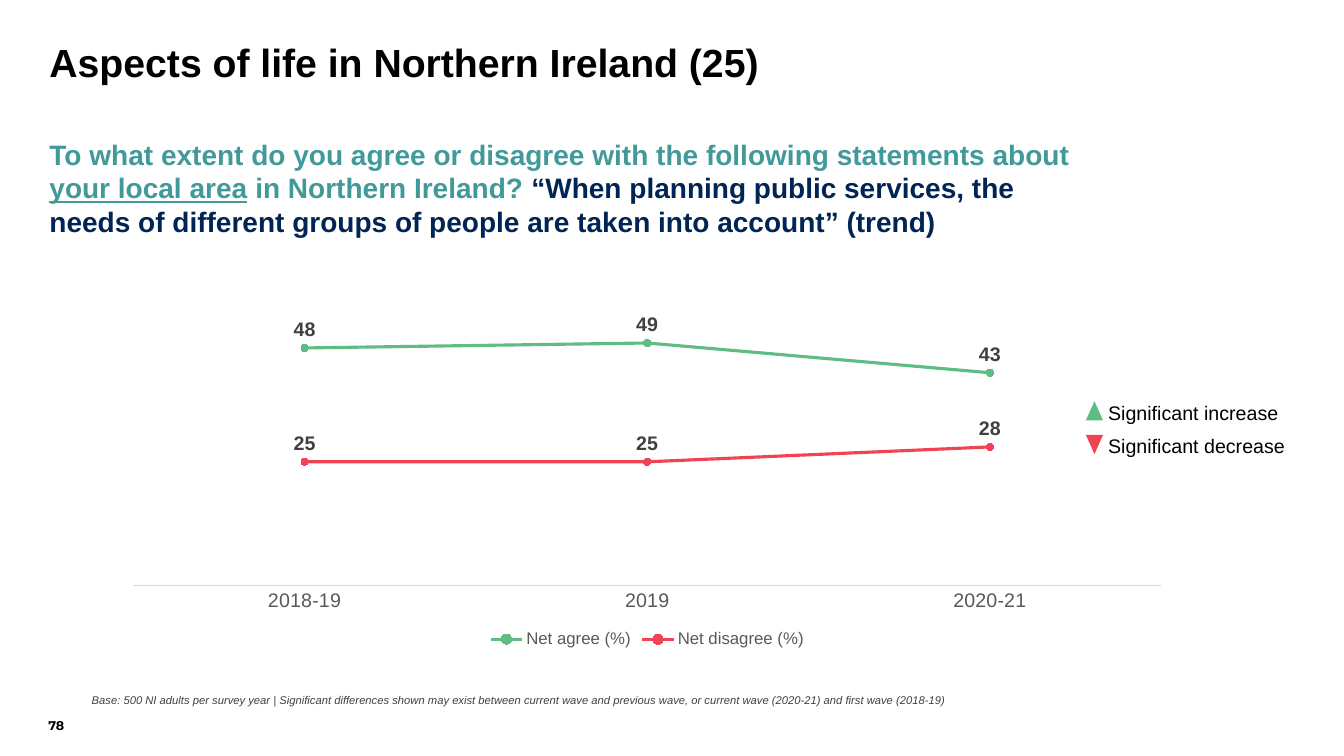
import pptx
import pptx.util
import pptx.dml.color
import pptx.chart.data
import pptx.enum.chart
import pptx.enum.shapes
import pptx.enum.text

Inches = pptx.util.Inches
Pt = pptx.util.Pt
Anchor = pptx.enum.text.MSO_ANCHOR

HUES = {
    "black": "000000", "teal": "419999", "navy": "002554", "green": "5FBD83",
    "red": "F14354", "dark": "404040", "grey": "595959", "rule": "D9D9D9",
}


def tint(name):
    """Return the named colour."""
    return pptx.dml.color.RGBColor.from_string(HUES[name])


def style(font, size, hue, bold=None, face="Arial"):
    """Set the face, size, colour and weight of a font."""
    font.name = face
    font.size = Pt(size)
    font.color.rgb = tint(hue)
    font.bold = bold


def write(slide, box, runs, size, bold=None, face="Arial", space=None,
          anchor=Anchor.TOP, wrap=True):
    """Place one paragraph of (text, colour) runs and return it."""
    frame = slide.shapes.add_textbox(*map(Inches, box)).text_frame
    frame.margin_left = frame.margin_right = 0
    frame.margin_top = frame.margin_bottom = 0
    frame.word_wrap = wrap
    frame.vertical_anchor = anchor
    para = frame.paragraphs[0]
    para.line_spacing = space
    for text, hue in runs:
        run = para.add_run()
        run.text = text
        style(run.font, size, hue, bold, face)
    return para


def head(slide, box):
    """Place the title and the survey question."""
    left, top, width, height = box
    write(slide, (left, top, width, 0.85),
          [("Aspects of life in Northern Ireland (25)", "black")],
          28, True, space=0.9)
    ask = write(slide, (left, top + 0.93, width, height - 0.93), [
        ("To what extent do you agree or disagree with the following "
         "statements about ", "teal"),
        ("your local area", "teal"),
        (" in Northern Ireland? ", "teal"),
        ("“When planning public services, the needs of different groups of "
         "people are taken into account” (trend)", "navy"),
    ], 20, True)
    ask.runs[1].font.underline = True


def trend(slide, box):
    """Place the line chart of agreement by survey year."""
    kinds = pptx.enum.chart
    data = pptx.chart.data.CategoryChartData(number_format="0")
    data.categories = ["2018-19", "2019", "2020-21"]
    data.add_series("Net agree (%)", [48, 49, 43])
    data.add_series("Net disagree (%)", [25, 25, 28])
    chart = slide.shapes.add_chart(
        kinds.XL_CHART_TYPE.LINE_MARKERS, *map(Inches, box), data).chart
    style(chart.font, 10, "black")
    chart.has_title = False
    chart.has_legend = True
    chart.legend.position = kinds.XL_LEGEND_POSITION.BOTTOM
    chart.legend.include_in_layout = False
    style(chart.legend.font, 12, "grey")

    years = chart.category_axis
    years.major_tick_mark = kinds.XL_TICK_MARK.NONE
    years.format.line.color.rgb = tint("rule")
    years.format.line.width = Pt(0.75)
    style(years.tick_labels.font, 14, "grey")
    scale = chart.value_axis
    scale.minimum_scale, scale.maximum_scale = 0, 60
    scale.has_major_gridlines = False
    scale.visible = False

    chart.plots[0].vary_by_categories = False
    for line, hue in zip(chart.plots[0].series, ("green", "red")):
        line.smooth = False
        line.format.line.color.rgb = tint(hue)
        line.format.line.width = Pt(2.25)
        mark = line.marker
        mark.style = kinds.XL_MARKER_STYLE.CIRCLE
        mark.size = 5
        mark.format.fill.solid()
        mark.format.fill.fore_color.rgb = tint(hue)
        mark.format.line.color.rgb = tint(hue)
        tags = line.data_labels
        tags.show_value = True
        tags.position = kinds.XL_LABEL_POSITION.ABOVE
        tags.number_format = "0"
        tags.number_format_is_linked = False
        style(tags.font, 14, "dark", True)


def key(slide, box):
    """Place the key to the significance arrows."""
    left, top, width, height = box
    rows = [("increase", "green", 0), ("decrease", "red", 180)]
    step = height / len(rows)
    for row, (word, hue, turn) in enumerate(rows):
        y = top + row * step
        arrow = slide.shapes.add_shape(
            pptx.enum.shapes.MSO_SHAPE.ISOSCELES_TRIANGLE,
            *map(Inches, (left, y + 0.03, 0.17, 0.19)))
        arrow.rotation = turn
        arrow.shadow.inherit = False
        arrow.fill.solid()
        arrow.fill.fore_color.rgb = tint(hue)
        arrow.line.fill.background()
        write(slide, (left + 0.22, y, width - 0.22, 0.25),
              [("Significant " + word, "black")], 14, space=1.1)


def foot(slide, box):
    """Place the base note and the page number."""
    left, top, width, height = box
    note = write(slide, (left + 0.43, top, width - 0.43, 0.14), [
        ("Base: 500 NI adults per survey year | Significant differences shown "
         "may exist between current wave and previous wave, or current wave "
         "(2020-21) and first wave (2018-19)", "dark"),
    ], 8, space=1.1, anchor=Anchor.BOTTOM)
    note.runs[0].font.italic = True
    write(slide, (left, top, 0.33, height), [("78", "black")], 9, True,
          "Montserrat", anchor=Anchor.BOTTOM, wrap=False)


def main():
    """Build the slide and save it."""
    deck = pptx.Presentation()
    deck.slide_width = Inches(13.33)
    deck.slide_height = Inches(7.5)
    slide = deck.slides.add_slide(deck.slide_layouts[6])
    head(slide, (0.49, 0.43, 10.22, 1.94))
    trend(slide, (1.11, 2.79, 10.62, 3.68))
    key(slide, (10.77, 3.95, 2.11, 0.67))
    foot(slide, (0.48, 6.87, 12.76, 0.4))
    deck.save("out.pptx")


if __name__ == "__main__":
    main()
